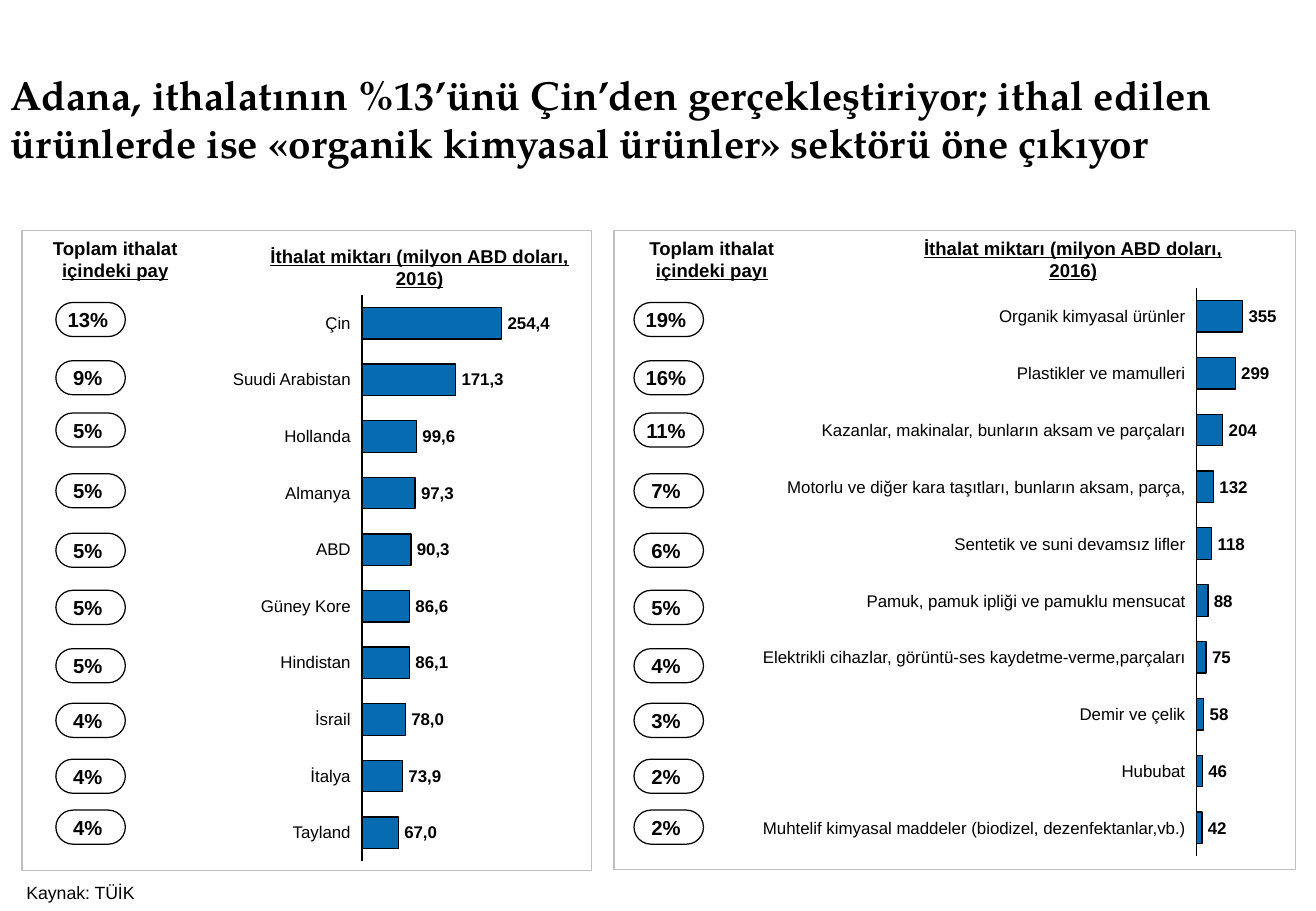
from lxml import etree
from pptx import Presentation
from pptx.chart.data import CategoryChartData
from pptx.dml.color import RGBColor
from pptx.enum.chart import XL_CHART_TYPE as ChartType, XL_TICK_LABEL_POSITION as TickLabels
from pptx.enum.chart import XL_TICK_MARK as TickMark
from pptx.enum.shapes import MSO_SHAPE as Shape
from pptx.enum.text import MSO_ANCHOR as Anchor, PP_ALIGN as Align
from pptx.oxml.ns import qn
from pptx.util import Pt

TITLE = ("Adana, ithalatının %13’ünü Çin’den gerçekleştiriyor; ithal edilen "
         "ürünlerde ise «organik kimyasal ürünler» sektörü öne çıkıyor")
SOURCE = "Kaynak: TÜİK"
AMOUNT_HEADER = ["İthalat miktarı (milyon ABD doları,", "2016)"]

# Rows: label, label width, amount, share
COUNTRIES = [
    ("Çin", 15, "254,4", "13%"),
    ("Suudi Arabistan", 70, "171,3", "9%"),
    ("Hollanda", 40, "99,6", "5%"),
    ("Almanya", 39, "97,3", "5%"),
    ("ABD", 21, "90,3", "5%"),
    ("Güney Kore", 54, "86,6", "5%"),
    ("Hindistan", 42, "86,1", "5%"),
    ("İsrail", 22, "78,0", "4%"),
    ("İtalya", 24, "73,9", "4%"),
    ("Tayland", 36, "67,0", "4%"),
]
PRODUCTS = [
    ("Organik kimyasal ürünler", 111, "355", "19%"),
    ("Plastikler ve mamulleri", 100, "299", "16%"),
    ("Kazanlar, makinalar, bunların aksam ve parçaları", 217, "204", "11%"),
    ("Motorlu ve diğer kara taşıtları, bunların aksam, parça,", 236, "132", "7%"),
    ("Sentetik ve suni devamsız lifler", 137, "118", "6%"),
    ("Pamuk, pamuk ipliği ve pamuklu mensucat", 189, "88", "5%"),
    ("Elektrikli cihazlar, görüntü-ses kaydetme-verme,parçaları", 251, "75", "4%"),
    ("Demir ve çelik", 63, "58", "3%"),
    ("Hububat", 38, "46", "2%"),
    ("Muhtelif kimyasal maddeler (biodizel, dezenfektanlar,vb.)", 251, "42", "2%"),
]
# Boxes are left, top, width, height; the plot is a fraction of the chart box
PANELS = [
    dict(rows=COUNTRIES, frame=(13, 136.8, 337.7, 379.4),
         share_header=["Toplam ithalat", "içindeki pay"], share_at=(14.4, 136.8),
         amount_at=(126.7, 141.8), pill_left=33.1,
         chart=(208.1, 168.2, 95.8, 348.5), plot=(0.068, 0.864), first_row=191.2),
    dict(rows=PRODUCTS, frame=(363.9, 136.8, 403.9, 378.7),
         share_header=["Toplam ithalat", "içindeki payı"], share_at=(367.9, 136.8),
         amount_at=(514.1, 136.8), pill_left=375.8,
         chart=(702.7, 164, 40.3, 349.9), plot=(0.16, 0.68), first_row=187.4),
]
PILL_TOPS = [179.3, 213.8, 244.8, 280.8, 316.1, 349.9, 384.5, 416.9, 450, 480.2]
PLOT_TOP, PLOT_HEIGHT = 0.019, 0.963
LABEL_HEIGHT = 12.2


def color(hex_code):
    return RGBColor.from_string(hex_code)


def outline(line, hex_code):
    line.color.rgb = color(hex_code)
    line.width = Pt(0.75)


def style(font, size, bold=False, name="Arial"):
    font.name, font.size, font.bold = name, Pt(size), bold
    font.color.rgb = color("000000")


def write(frame, lines, size, bold=False, align=Align.LEFT, anchor=Anchor.MIDDLE,
          insets=None, wrap=True):
    """Fill a text frame; insets are (left, right) with none above or below."""
    frame.text = "\n".join(lines)
    frame.word_wrap, frame.vertical_anchor = wrap, anchor
    if insets:
        frame.margin_left, frame.margin_right = map(Pt, insets)
        frame.margin_top = frame.margin_bottom = 0
    for paragraph in frame.paragraphs:
        paragraph.alignment = align
        for run in paragraph.runs:
            style(run.font, size, bold)
    return frame


def text_box(slide, box, lines, size, **options):
    return write(slide.shapes.add_textbox(*map(Pt, box)).text_frame, lines, size, **options)


def add_box(slide, kind, box, line_color, fill=None):
    shape = slide.shapes.add_shape(kind, *map(Pt, box))
    shape.shadow.inherit = False
    outline(shape.line, line_color)
    if fill:
        shape.fill.solid()
        shape.fill.fore_color.rgb = color(fill)
    else:
        shape.fill.background()
    return shape


def fix_plot_area(chart, x, width):
    plot_area = chart.element.find(".//" + qn("c:plotArea"))
    for old in plot_area.findall(qn("c:layout")):
        plot_area.remove(old)
    layout = etree.Element(qn("c:layout"))
    manual = etree.SubElement(layout, qn("c:manualLayout"))
    settings = [("layoutTarget", "inner"), ("xMode", "edge"), ("yMode", "edge"),
                ("x", x), ("y", PLOT_TOP), ("w", width), ("h", PLOT_HEIGHT)]
    for tag, value in settings:
        etree.SubElement(manual, qn("c:" + tag)).set("val", str(value))
    plot_area.insert(0, layout)


def add_bars(slide, panel, indexes):
    data = CategoryChartData()
    data.categories = [str(n) for n in range(1, len(indexes) + 1)]
    data.add_series("Series 1", indexes)
    chart = slide.shapes.add_chart(ChartType.BAR_STACKED, *map(Pt, panel["chart"]), data).chart
    chart.has_title = chart.has_legend = False
    style(chart.font, 10)
    rank, index = chart.category_axis, chart.value_axis
    rank.reverse_order = True
    rank.tick_label_position = TickLabels.NONE
    rank.major_tick_mark = rank.minor_tick_mark = TickMark.NONE
    outline(rank.format.line, "000000")
    index.minimum_scale, index.maximum_scale = 0, 100
    index.has_major_gridlines = index.visible = False
    plot = chart.plots[0]
    plot.gap_width, plot.overlap, plot.vary_by_categories = 80, 100, False
    bars = plot.series[0].format
    bars.fill.solid()
    bars.fill.fore_color.rgb = color("066BB0")
    outline(bars.line, "000000")
    fix_plot_area(chart, *panel["plot"])


def add_panel(slide, panel):
    rows = panel["rows"]
    amounts = [float(row[2].replace(",", ".")) for row in rows]
    indexes = [round(100 * amount / max(amounts)) for amount in amounts]
    add_box(slide, Shape.RECTANGLE, panel["frame"], "BFBFBF")
    add_bars(slide, panel, indexes)

    header = dict(bold=True, align=Align.CENTER, anchor=Anchor.TOP)
    share = text_box(slide, (*panel["share_at"], 108, 33.8), panel["share_header"], 11, **header)
    amount = text_box(slide, (*panel["amount_at"], 244.1, 33.8), AMOUNT_HEADER, 11, **header)
    for paragraph in (share.paragraphs[1], *amount.paragraphs):
        paragraph.runs[0].font.underline = True

    chart_left, _, chart_width, chart_height = panel["chart"]
    axis = chart_left + panel["plot"][0] * chart_width
    full_bar = panel["plot"][1] * chart_width
    pitch = chart_height * PLOT_HEIGHT / len(rows)
    for n, (label, width, amount, share) in enumerate(rows):
        top = panel["first_row"] + n * pitch - LABEL_HEIGHT / 2
        bar_end = axis + full_bar * indexes[n] / 100
        text_box(slide, (chart_left - 0.3 - width, top, width, LABEL_HEIGHT), [label], 10,
                 align=Align.RIGHT, insets=(0, 0), wrap=False)
        text_box(slide, (bar_end + 2, top, 5.6 * len(amount) + 5, LABEL_HEIGHT), [amount], 10,
                 bold=True, insets=(1.5, 1.5), wrap=False)
        pill = add_box(slide, Shape.ROUNDED_RECTANGLE,
                       (panel["pill_left"], PILL_TOPS[n], 41.2, 20.2), "000000", "FFFFFF")
        pill.adjustments[0] = 0.5
        write(pill.text_frame, [share], 12, bold=True, align=Align.CENTER,
              insets=(0, 3.3), wrap=False)


def main():
    deck = Presentation()
    deck.slide_width, deck.slide_height = Pt(780), Pt(540)
    slide = deck.slides.add_slide(deck.slide_layouts[5])
    title = slide.shapes.title
    title.left, title.top, title.width, title.height = map(Pt, (6.5, 42, 773.5, 92))
    write(title.text_frame, [TITLE], 24, bold=True, anchor=Anchor.TOP, insets=(0, 0))
    heading = title.text_frame.paragraphs[0]
    heading.line_spacing = Pt(28.4)
    heading.runs[0].font.name = "TeX Gyre Pagella"
    for panel in PANELS:
        add_panel(slide, panel)
    text_box(slide, (8.6, 517.7, 600, 22.3), [SOURCE], 10.5)
    deck.save("out.pptx")


if __name__ == "__main__":
    main()
